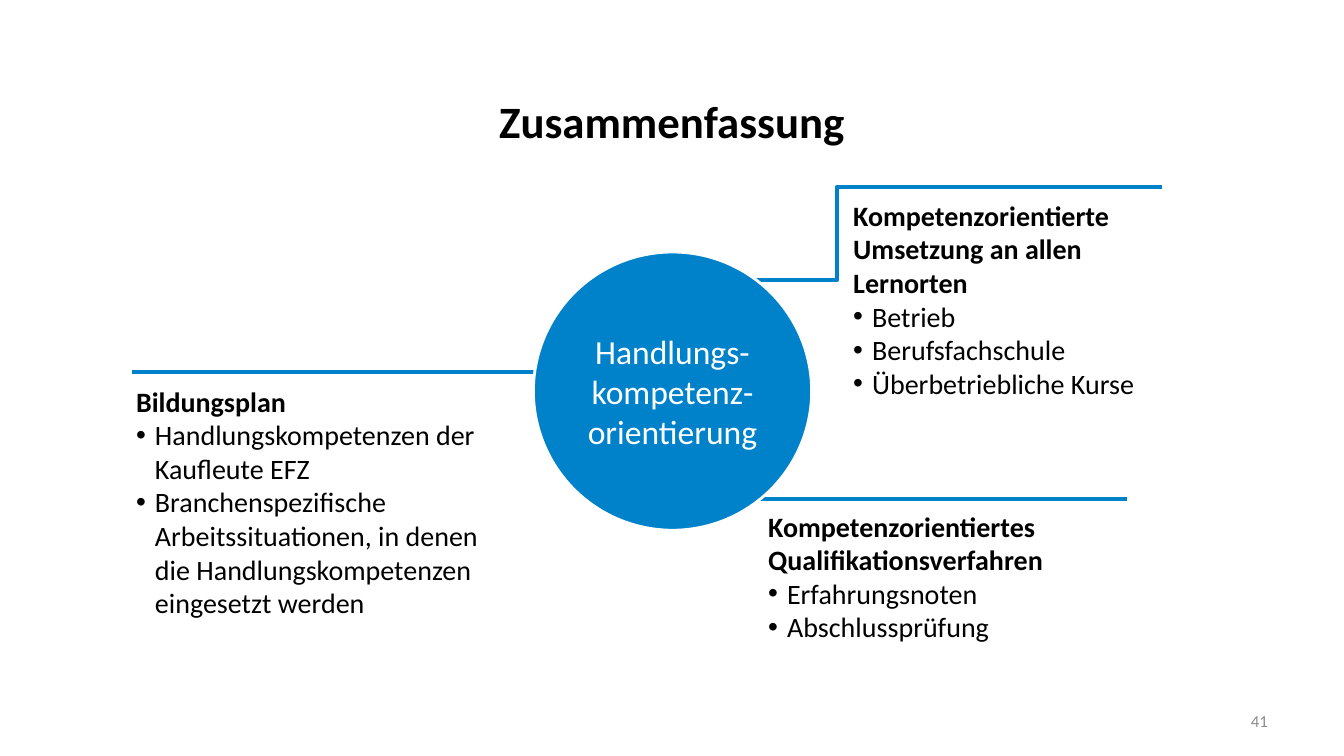
from lxml import etree
from pptx import Presentation
from pptx.dml.color import RGBColor
from pptx.enum.shapes import MSO_CONNECTOR, MSO_SHAPE
from pptx.enum.text import MSO_ANCHOR, MSO_AUTO_SIZE, PP_ALIGN
from pptx.oxml.ns import qn
from pptx.util import Emu, Pt

PX = 9525  # 96 px to the inch
BLUE = RGBColor(0x00, 0x82, 0xCA)
WHITE = RGBColor(0xFF, 0xFF, 0xFF)
BLACK = RGBColor(0x00, 0x00, 0x00)
GRAY = RGBColor(0x8C, 0x8C, 0x8C)
STRAIGHT, ELBOW = MSO_CONNECTOR.STRAIGHT, MSO_CONNECTOR.ELBOW
TOP, MIDDLE = MSO_ANCHOR.TOP, MSO_ANCHOR.MIDDLE
LEFT, CENTER, RIGHT = PP_ALIGN.LEFT, PP_ALIGN.CENTER, PP_ALIGN.RIGHT
COMPARISON_LAYOUT = 3 + 1
INDENT = 18


def place(shape, left, top, width, height):
    shape.left, shape.top = Emu(left * PX), Emu(top * PX)
    shape.width, shape.height = Emu(width * PX), Emu(height * PX)


def style(paragraph, size, color, align, bold=False):
    paragraph.alignment = align
    paragraph.space_before = Pt(0)
    font = paragraph.font
    font.name, font.size, font.bold = "Calibri", Pt(size), bold
    font.color.rgb = color


prs = Presentation()
prs.slide_width, prs.slide_height = Emu(1280 * PX), Emu(720 * PX)
slide = prs.slides.add_slide(prs.slide_layouts[COMPARISON_LAYOUT])
title, *bodies, spare = slide.placeholders
spare.element.getparent().remove(spare.element)

place(title, 64, 81, 1152, 68)
title.text_frame.text = "Zusammenfassung"
title.text_frame.vertical_anchor = MIDDLE
style(title.text_frame.paragraphs[0], 32, BLACK, CENTER, bold=True)

topics = [
    ((722, 480, 351, 168), "Kompetenzorientiertes Qualifikationsverfahren",
     ["Erfahrungsnoten", "Abschlussprüfung"]),
    ((803, 184, 319, 244), "Kompetenzorientierte Umsetzung an allen Lernorten",
     ["Betrieb", "Berufsfachschule", "Überbetriebliche Kurse"]),
    ((120, 361, 390, 265), "Bildungsplan",
     ["Handlungskompetenzen der Kaufleute EFZ",
      "Branchenspezifische Arbeitssituationen, in denen \v"
      "die Handlungskompetenzen eingesetzt werden"]),
]
for body, (box, heading, points) in zip(bodies, topics):
    place(body, *box)
    frame = body.text_frame
    frame.auto_size = MSO_AUTO_SIZE.NONE
    frame.vertical_anchor = TOP
    for i, text in enumerate([heading] + points):
        paragraph = frame.paragraphs[0] if i == 0 else frame.add_paragraph()
        paragraph.text = text
        props = paragraph._p.get_or_add_pPr()
        indent = INDENT * PX if i else 0
        props.set("marL", str(indent))
        props.set("indent", str(-indent))
        if i:
            etree.SubElement(props, qn("a:buFont"), typeface="Arial")
            etree.SubElement(props, qn("a:buChar"), char="•")
        else:
            etree.SubElement(props, qn("a:buNone"))
        style(paragraph, 20, BLACK, LEFT, bold=i == 0)

branches = [
    (STRAIGHT, 126, 354, 539, 354),
    (STRAIGHT, 707, 475, 1073, 475),
    (ELBOW, 935, 178, 659, 267),
    (STRAIGHT, 839, 178, 1107, 178),
]
for kind, *ends in branches:
    branch = slide.shapes.add_connector(kind, *(Emu(end * PX) for end in ends))
    branch.line.color.rgb = BLUE
    branch.line.width = Pt(2.75)
    etree.SubElement(branch._element.spPr, qn("a:effectLst"))

core = slide.shapes.add_shape(MSO_SHAPE.OVAL, 0, 0, 0, 0)
place(core, 508, 240, 265, 265)
core.shadow.inherit = False
core.fill.solid()
core.fill.fore_color.rgb = BLUE
core.line.color.rgb = WHITE
core.line.width = Pt(2)
frame = core.text_frame
frame.margin_left = frame.margin_top = frame.margin_right = frame.margin_bottom = 0
frame.word_wrap = True
frame.vertical_anchor = MIDDLE
frame.text = "Handlungs-kompetenz-orientierung"
style(frame.paragraphs[0], 24, WHITE, CENTER)

page_number = slide.shapes.add_textbox(0, 0, 0, 0)
place(page_number, 918, 667, 299, 38)
page_number.text_frame.word_wrap = True
page_number.text_frame.vertical_anchor = MIDDLE
page_number.text_frame.text = "41"
style(page_number.text_frame.paragraphs[0], 12, GRAY, RIGHT)

prs.save("out.pptx")
